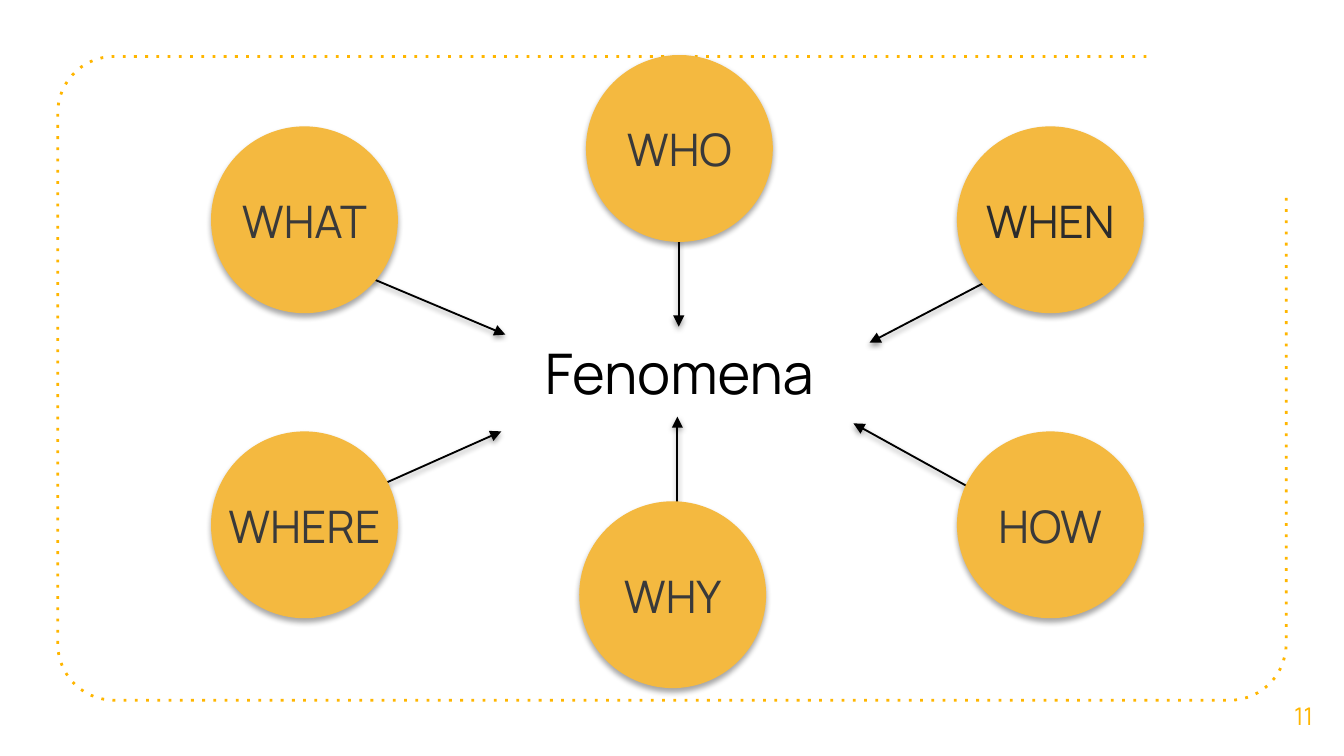
from math import cos, radians, sin
from typing import NamedTuple

from lxml import etree
from pptx import Presentation
from pptx import util as u
from pptx.dml.color import RGBColor
from pptx.enum import shapes, text
from pptx.oxml.ns import qn

HUES = {"frame": "FFB600", "disc": "F4B940", "ink": "000000",
        "label": "39393A", "dark": "2B2B2C"}
FONT = "Manrope"
SIZE = 1.39  # disc diameter
DROP = 0.45  # from the top of a disc to its label


class Topic(NamedTuple):
    word: str
    left: float
    top: float
    wide: float
    start: tuple[float, float]
    end: tuple[float, float]
    hue: str = "label"


TOPICS = [
    Topic("WHAT", 1.57, 0.94, 1.11, (2.69, 2.04), (3.76, 2.49)),
    Topic("WHEN", 7.12, 0.94, 1.34, (7.58, 1.97), (6.47, 2.55), "dark"),
    Topic("WHO", 4.36, 0.41, 1.5, (5.05, 1.57), (5.05, 2.43)),
    Topic("WHY", 4.31, 3.73, 1.34, (5.04, 3.96), (5.04, 3.1)),
    Topic("HOW", 7.12, 3.21, 1.61, (7.38, 3.72), (6.35, 3.15)),
    Topic("WHERE", 1.57, 3.21, 1.5, (2.72, 3.66), (3.73, 3.21)),
]


def color(name: str) -> RGBColor:
    return RGBColor.from_string(HUES[name])


def shade(shape, alpha: int, dist: float) -> None:
    """Add a soft shadow straight below; call after fill and line are set."""
    fx = etree.SubElement(shape._element.spPr, qn("a:effectLst"))
    cast = etree.SubElement(fx, qn("a:outerShdw"), blurRad=str(u.Pt(3)),
                            dist=str(u.Pt(dist)), dir="5400000", rotWithShape="0")
    tint = etree.SubElement(cast, qn("a:srgbClr"), val=HUES["ink"])
    etree.SubElement(tint, qn("a:alpha"), val=str(alpha * 1000))


def draw_frame(slide) -> None:
    """Draw the dotted round-cornered frame, open at the top right."""
    left, top, right, low, bend = 0.43, 0.42, 9.57, 5.21, 0.42
    # Each corner: centre of its arc and the angle where the arc begins
    turns = [(left + bend, top + bend, 270), (left + bend, low - bend, 180),
             (right - bend, low - bend, 90)]
    spots = [(x + bend * cos(radians(a - step)), y + bend * sin(radians(a - step)))
             for x, y, a in turns for step in range(0, 91, 6)]
    spots.append((right, 1.46))
    pen = slide.shapes.build_freeform(u.Inches(8.53), u.Inches(top))
    pen.add_line_segments([(u.Inches(x), u.Inches(y)) for x, y in spots], close=False)
    frame = pen.convert_to_shape()
    frame.shadow.inherit = False
    frame.fill.background()
    frame.line.color.rgb = color("frame")
    frame.line.width = u.Pt(1.5)
    etree.SubElement(frame.line._get_or_add_ln(), qn("a:prstDash"), val="dot")


def draw_arrow(slide, topic: Topic) -> None:
    ends = [u.Inches(n) for n in (*topic.start, *topic.end)]
    arrow = slide.shapes.add_connector(shapes.MSO_CONNECTOR.STRAIGHT, *ends)
    arrow.line.color.rgb = color("ink")
    arrow.line.width = u.Pt(1)
    etree.SubElement(arrow.line._get_or_add_ln(), qn("a:tailEnd"), type="triangle")
    shade(arrow, 38, 1.6)


def draw_disc(slide, topic: Topic) -> None:
    disc = slide.shapes.add_shape(
        shapes.MSO_SHAPE.OVAL, u.Inches(topic.left), u.Inches(topic.top),
        u.Inches(SIZE), u.Inches(SIZE))
    disc.fill.solid()
    disc.fill.fore_color.rgb = color("disc")
    disc.line.fill.background()
    shade(disc, 35, 1.8)


def write(slide, word: str, at: tuple[float, float, float, float], size: int,
          hue: str, inset: float = 0.05, wrap: bool = True,
          anchor=text.MSO_ANCHOR.TOP) -> None:
    frame = slide.shapes.add_textbox(*[u.Inches(n) for n in at]).text_frame
    frame.word_wrap = wrap
    frame.auto_size = text.MSO_AUTO_SIZE.SHAPE_TO_FIT_TEXT
    frame.vertical_anchor = anchor
    frame.margin_left = frame.margin_right = u.Inches(inset)
    frame.margin_top = frame.margin_bottom = u.Inches(inset)
    para = frame.paragraphs[0]
    para.alignment = text.PP_ALIGN.CENTER
    run = para.add_run()
    run.text = word
    run.font.name = FONT
    run.font.size = u.Pt(size)
    run.font.color.rgb = color(hue)


def main() -> None:
    deck = Presentation()
    deck.slide_width = u.Inches(10)
    deck.slide_height = u.Inches(10 * 9 / 16)
    slide = deck.slides.add_slide(deck.slide_layouts[6])
    draw_frame(slide)
    for topic in TOPICS:
        draw_arrow(slide, topic)
    for topic in TOPICS:
        draw_disc(slide, topic)
    write(slide, "11", (9.5, 5.12, 0.4, 0.41), 13, "frame", 0.1, False,
          text.MSO_ANCHOR.MIDDLE)
    write(slide, "Fenomena", (3.36, 2.47, 3.39, 0.59), 30, "ink")
    for topic in TOPICS:
        left = topic.left + (SIZE - topic.wide) / 2
        write(slide, topic.word, (left, topic.top + DROP, topic.wide, 0.5), 24, topic.hue)
    deck.save("out.pptx")


if __name__ == "__main__":
    main()
